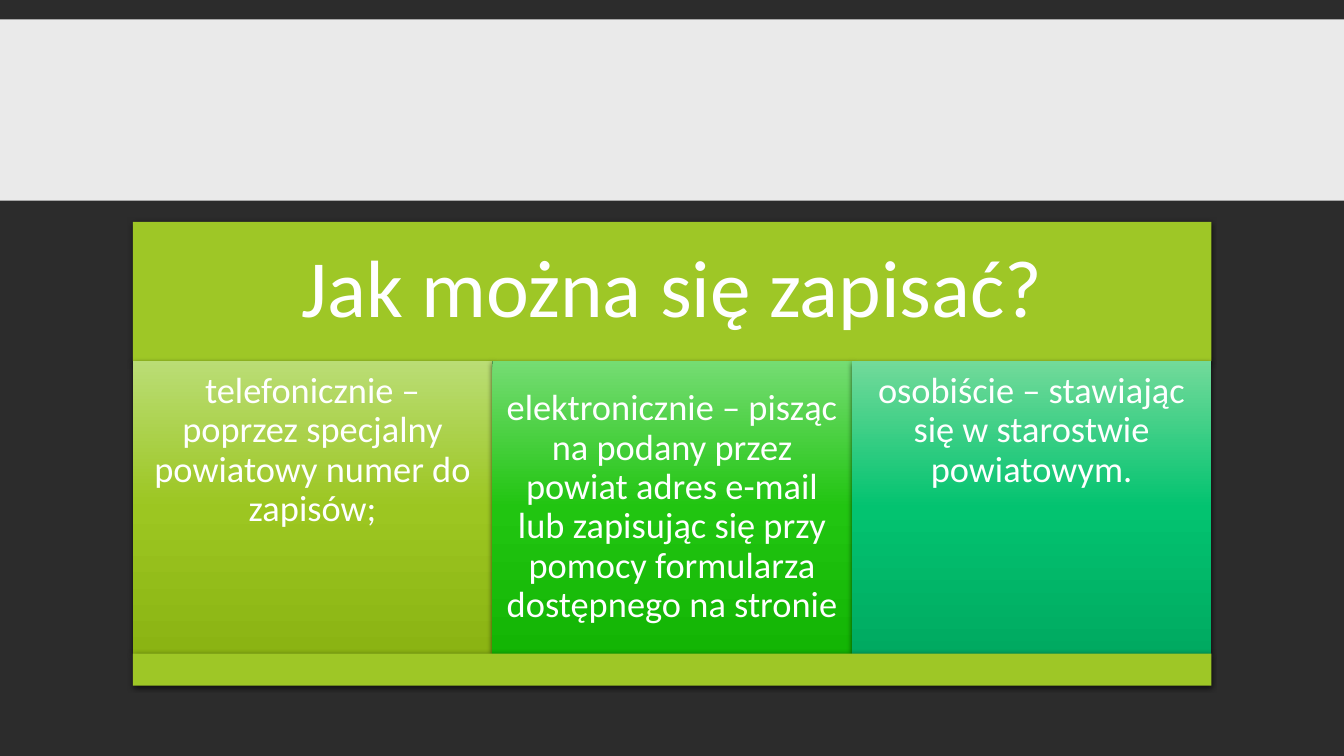
from copy import deepcopy
from dataclasses import dataclass

from pptx import Presentation
from pptx.dml.color import RGBColor
from pptx.enum.shapes import MSO_SHAPE
from pptx.enum.text import MSO_ANCHOR, PP_ALIGN
from pptx.oxml import parse_xml
from pptx.oxml.ns import nsdecls, qn
from pptx.util import Cm, Pt

RECTANGLE = MSO_SHAPE.RECTANGLE
TOP, MIDDLE = MSO_ANCHOR.TOP, MSO_ANCHOR.MIDDLE
CENTER = PP_ALIGN.CENTER
BLANK_LAYOUT = 6


@dataclass(frozen=True)
class Theme:
    font: str = "Calibri"
    heading_size: int = 58
    option_size: int = 26
    background: str = "2C2C2C"
    white: str = "FFFFFF"
    lime: str = "9EC726"
    option_gradients: tuple = (
        ("BADD75", "9CC621", "8BB413"),
        ("75DC73", "21C511", "13B504"),
        ("72DA9A", "03C370", "00AA61"),
    )


THEME = Theme()
SLIDE_WIDTH, SLIDE_HEIGHT = Cm(33.87), Cm(19.05)
BOARD_LEFT, BOARD_TOP, BOARD_WIDTH = Cm(3.35), Cm(5.59), Cm(27.18)
HEADING_HEIGHT, OPTION_HEIGHT, FOOTER_HEIGHT = Cm(3.51), Cm(7.37), Cm(0.81)

HEADING = "Jak można się zapisać?"
OPTIONS = (
    ("telefonicznie – poprzez specjalny powiatowy numer do zapisów;", TOP),
    ("elektronicznie – pisząc na podany przez powiat adres e-mail lub "
     "zapisując się przy pomocy formularza dostępnego na stronie", MIDDLE),
    ("osobiście – stawiając się w starostwie powiatowym.", TOP),
)


def add_panel(slide, left, top, width, height, color):
    panel = slide.shapes.add_shape(RECTANGLE, left, top, width, height)
    panel.shadow.inherit = False
    panel.line.fill.background()
    panel.fill.solid()
    panel.fill.fore_color.rgb = RGBColor.from_string(color)
    return panel


def add_shadow(panel):
    """Put a soft black shadow just below the panel."""
    effects = panel._element.spPr.find(qn("a:effectLst"))
    effects.append(parse_xml(
        f'<a:outerShdw {nsdecls("a")} blurRad="{Pt(4)}" dist="{Pt(1.2)}" '
        'dir="5400000" algn="ctr" rotWithShape="0">'
        '<a:srgbClr val="000000"><a:alpha val="68000"/></a:srgbClr>'
        '</a:outerShdw>'))


def set_opacity(panel, percent):
    color = panel._element.spPr.find(qn("a:solidFill"))[0]
    color.append(parse_xml(
        f'<a:alpha {nsdecls("a")} val="{percent * 1000}"/>'))


def set_gradient(panel, colors):
    """Fill the panel from top to bottom with three evenly spaced colours."""
    panel.fill.gradient()
    panel.fill.gradient_angle = 270
    stop_list = panel._element.spPr.find(qn("a:gradFill")).find(qn("a:gsLst"))
    stop_list.insert(1, deepcopy(stop_list[0]))
    for index, (stop, color) in enumerate(zip(panel.fill.gradient_stops, colors)):
        stop.position = index / 2
        stop.color.rgb = RGBColor.from_string(color)


def write_text(panel, text, size, inset, anchor):
    frame = panel.text_frame
    frame.text = text
    frame.word_wrap = True
    frame.vertical_anchor = anchor
    frame.margin_left = frame.margin_right = inset
    frame.margin_top = frame.margin_bottom = inset
    paragraph = frame.paragraphs[0]
    paragraph.alignment = CENTER
    paragraph.line_spacing = 0.9
    font = paragraph.runs[0].font
    font.name = THEME.font
    font.size = Pt(size)
    font.color.rgb = RGBColor.from_string(THEME.white)


def add_board(slide):
    """Stack the heading, the row of options and the footer bar."""
    options_top = BOARD_TOP + HEADING_HEIGHT
    option_width = BOARD_WIDTH // len(OPTIONS)

    heading = add_panel(slide, BOARD_LEFT, BOARD_TOP, BOARD_WIDTH,
                        HEADING_HEIGHT, THEME.lime)
    add_shadow(heading)
    write_text(heading, HEADING, THEME.heading_size, Cm(0.61), MIDDLE)

    for column, (text, anchor) in enumerate(OPTIONS):
        option = add_panel(slide, BOARD_LEFT + column * option_width, options_top,
                           option_width, OPTION_HEIGHT, THEME.lime)
        set_gradient(option, THEME.option_gradients[column])
        add_shadow(option)
        write_text(option, text, THEME.option_size, Cm(0.28), anchor)

    footer = add_panel(slide, BOARD_LEFT, options_top + OPTION_HEIGHT,
                       BOARD_WIDTH, FOOTER_HEIGHT, THEME.lime)
    add_shadow(footer)


def main():
    presentation = Presentation()
    presentation.slide_width = SLIDE_WIDTH
    presentation.slide_height = SLIDE_HEIGHT
    slide = presentation.slides.add_slide(presentation.slide_layouts[BLANK_LAYOUT])
    slide.background.fill.solid()
    slide.background.fill.fore_color.rgb = RGBColor.from_string(THEME.background)

    title_band = add_panel(slide, 0, Cm(0.49), SLIDE_WIDTH, Cm(4.57), THEME.white)
    set_opacity(title_band, 90)
    add_board(slide)
    presentation.save("out.pptx")


if __name__ == "__main__":
    main()
